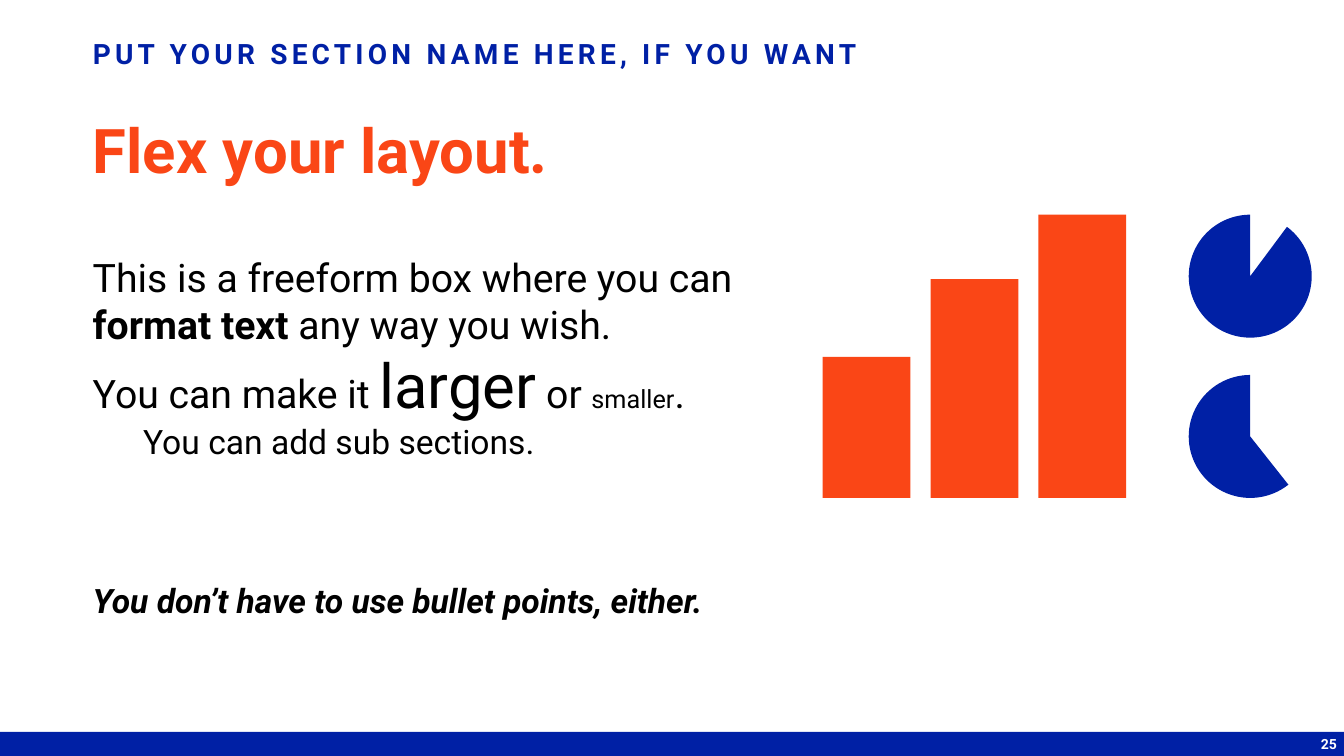
from pptx import Presentation
from pptx.dml.color import RGBColor
from pptx.enum.shapes import MSO_SHAPE as Shape
from pptx.enum.text import MSO_ANCHOR as Anchor, MSO_AUTO_SIZE as AutoSize, PP_ALIGN as Align
from pptx.oxml.xmlchemy import OxmlElement
from pptx.util import Inches, Pt

BLUE = RGBColor(0x00, 0x20, 0xA5)
ORANGE = RGBColor(0xFA, 0x46, 0x16)
BLACK = RGBColor(0x00, 0x00, 0x00)
WHITE = RGBColor(0xFF, 0xFF, 0xFF)
LEFT, TOP = 0.92, 0.4


def apply_format(target, values):
    """Set each named attribute of the target."""
    for name, value in values.items():
        setattr(target, name, value)


def place(shape, box):
    """Move a shape to a box given in inches."""
    names = ("left", "top", "width", "height")
    apply_format(shape, dict(zip(names, map(Inches, box))))


def prepare_frame(shape, anchor):
    """Return the shape's text frame without margins."""
    frame = shape.text_frame
    apply_format(frame, {
        "margin_left": 0, "margin_top": 0, "margin_right": 0, "margin_bottom": 0,
        "word_wrap": True, "auto_size": AutoSize.NONE, "vertical_anchor": anchor,
    })
    return frame


def add_span(para, text, size, color, **values):
    """Add a formatted run to a paragraph."""
    span = para.add_run()
    span.text = text
    apply_format(span.font, {"name": "Roboto", "size": Pt(size), **values})
    span.font.color.rgb = color
    return span


def add_solid(page, kind, box, color):
    """Draw a plain filled shape."""
    shape = page.shapes.add_shape(kind, *map(Inches, box))
    shape.shadow.inherit = False
    shape.fill.solid()
    shape.fill.fore_color.rgb = color
    shape.line.fill.background()
    return shape


def add_footer(page, box):
    """Draw the bottom band and its page number."""
    left, top, width, height = box
    add_solid(page, Shape.RECTANGLE, box, BLUE)
    number = page.shapes.add_textbox(
        *map(Inches, (left + width - 3.07, top + 0.03, 3, 0.17)))
    para = prepare_frame(number, Anchor.BOTTOM).paragraphs[0]
    para.alignment = Align.RIGHT
    add_span(para, "25", 10, WHITE, bold=True)


def add_headings(page, box):
    """Fill the title and the section name above it."""
    left, top, width, height = box
    title, section = page.placeholders
    place(title, box)
    para = prepare_frame(title, Anchor.BOTTOM).paragraphs[0]
    apply_format(para, {"alignment": Align.LEFT, "line_spacing": 0.9})
    add_span(para, "Flex your layout.", 44, ORANGE, bold=True)

    place(section, (left, top, width, 0.3))
    para = prepare_frame(section, Anchor.TOP).paragraphs[0]
    apply_format(para, {"line_spacing": 0.9, "space_before": Pt(10)})
    properties = para._p.get_or_add_pPr()
    properties.set("marL", "0")
    properties.set("indent", "0")
    properties.append(OxmlElement("a:buNone"))
    span = add_span(para, "PUT YOUR SECTION NAME HERE, IF YOU WANT", 20, BLUE, bold=True)
    span.font._element.set("spc", "300")


def add_message(page, box):
    """Write the freely formatted text."""
    message = page.shapes.add_textbox(*map(Inches, box))
    frame = prepare_frame(message, Anchor.TOP)
    para = frame.paragraphs[0]
    add_span(para, "This is a freeform box where you can", 28, BLACK)
    para.add_line_break()
    add_span(para, "format text ", 28, BLACK, bold=True)
    add_span(para, "any way you wish.", 28, BLACK)

    para = frame.add_paragraph()
    for text, size in (("You can make it ", 28), ("larger", 44), (" or ", 28),
                       ("smaller", 18), (".", 28)):
        add_span(para, text, size, BLACK)

    para = frame.add_paragraph()
    para.level = 1
    para._p.get_or_add_pPr().set("marL", str(Inches(0.5)))
    add_span(para, "You can add sub sections.", 24, BLACK)

    para = frame.add_paragraph()
    para.space_before = Pt(85)
    add_span(para, "You don’t have to use bullet points, either.", 24, BLACK,
             bold=True, italic=True)


def add_bars(page, box):
    """Draw rising bars that share a base line."""
    left, top, width, height = box
    bar_width = 0.87
    heights = (1.4, 2.17, height)
    step = (width - bar_width) / (len(heights) - 1)
    for index, bar_height in enumerate(heights):
        bar = (left + index * step, top + height - bar_height, bar_width, bar_height)
        add_solid(page, Shape.RECTANGLE, bar, ORANGE)


def add_pies(page, box):
    """Draw pies at the top and bottom of the box."""
    left, top, size, height = box
    for offset, start in ((0, 184), (height - size, 31)):
        pie = add_solid(page, Shape.PIE, (left, top + offset, size, size), BLUE)
        pie.adjustments[0] = start
        pie.adjustments[1] = 162


def main():
    """Build and save the deck."""
    deck = Presentation()
    apply_format(deck, {"slide_width": Inches(13.33), "slide_height": Inches(7.5)})
    page = deck.slides.add_slide(deck.slide_layouts[1])
    add_footer(page, (0, 7.26, 13.33, 0.24))
    add_headings(page, (LEFT, TOP, 11.5, 1.45))
    add_bars(page, (8.16, 2.13, 3.01, 2.81))
    add_pies(page, (11.79, 2.13, 1.22, 2.81))
    add_message(page, (LEFT, 2.51, 7.03, 3.8))
    deck.save("out.pptx")


if __name__ == "__main__":
    main()
